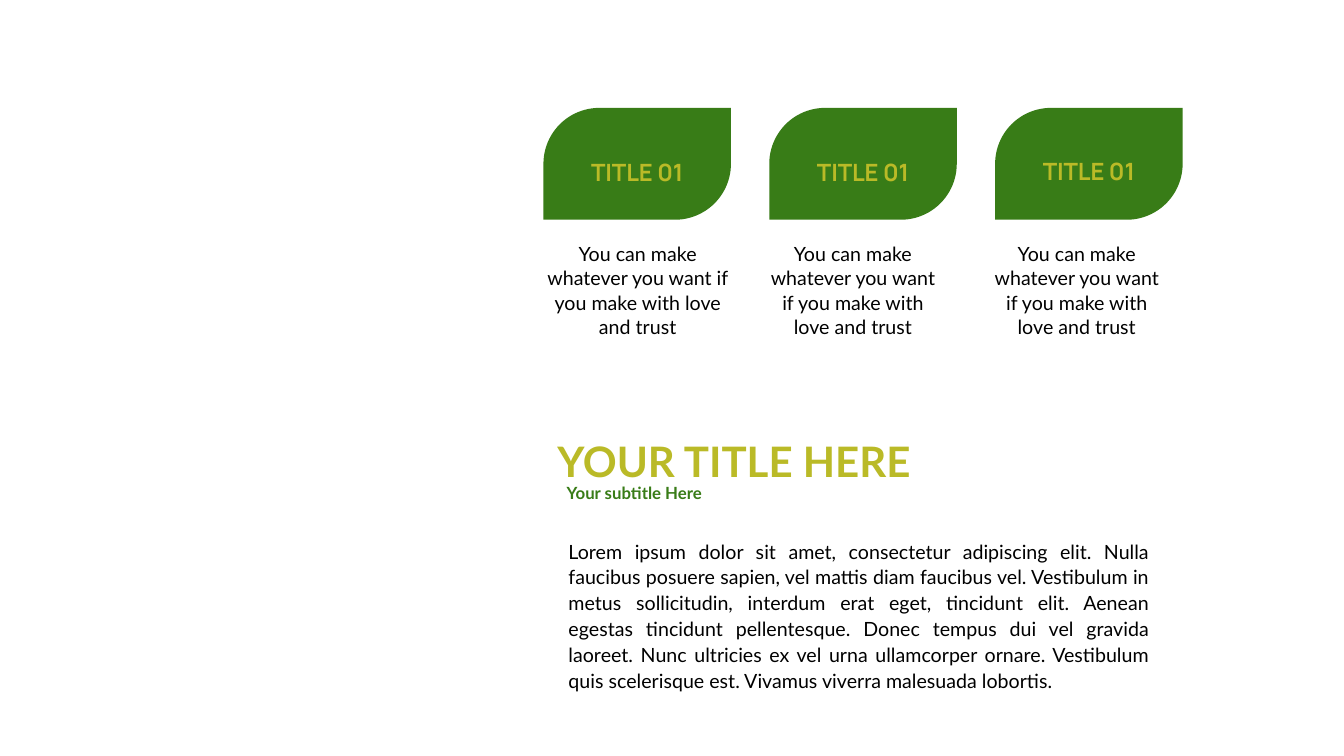
from pptx import Presentation
from pptx.dml.color import RGBColor
from pptx.enum.shapes import MSO_SHAPE
from pptx.enum.text import MSO_ANCHOR, PP_ALIGN
from pptx.util import Inches, Pt

GREEN = RGBColor(0x38, 0x7C, 0x17)
OLIVE = RGBColor(0xBA, 0xBA, 0x27)
BLACK = RGBColor(0, 0, 0)

CARD_TITLE = "TITLE 01"
CARD_TEXT = "You can make whatever you want if you make with love and trust"
BODY = (
    "Lorem ipsum dolor sit amet, consectetur adipiscing elit. Nulla faucibus "
    "posuere sapien, vel mattis diam faucibus vel. Vestibulum in metus "
    "sollicitudin, interdum erat eget, tincidunt elit. Aenean egestas tincidunt "
    "pellentesque. Donec tempus dui vel gravida laoreet. Nunc ultricies ex vel "
    "urna ullamcorper ornare. Vestibulum quis scelerisque est. Vivamus viverra "
    "malesuada lobortis."
)


def add_text(s, box, text, size, color, align, font="Lato", bold=False,
             spacing=None, anchor=MSO_ANCHOR.TOP, wrap=True, inset=(0.1, 0.05)):
    """Add a one-paragraph text box and return its run."""
    tf = s.shapes.add_textbox(*map(Inches, box)).text_frame
    tf.word_wrap = wrap
    tf.vertical_anchor = anchor
    tf.margin_left = tf.margin_right = Inches(inset[0])
    tf.margin_top = tf.margin_bottom = Inches(inset[1])
    p = tf.paragraphs[0]
    p.text = text
    p.alignment = align
    p.line_spacing = spacing
    r = p.runs[0]
    r.font.name = font
    r.font.size = Pt(size)
    r.font.bold = bold
    r.font.color.rgb = color
    return r


def add_card(s, x, y, w, title_dy, text_dx, text_w):
    """Add a leaf-shaped card with its title and the caption below it."""
    sp = s.shapes.add_shape(MSO_SHAPE.ROUND_2_DIAG_RECTANGLE,
                            Inches(x), Inches(y), Inches(w), Inches(1.11))
    sp.adjustments[0] = 0.5
    sp.adjustments[1] = 0
    sp.shadow.inherit = False
    sp.fill.solid()
    sp.fill.fore_color.rgb = GREEN
    sp.line.fill.background()
    r = add_text(s, (x, y + title_dy, w, 0.39), CARD_TITLE, 17, OLIVE,
                 PP_ALIGN.CENTER, font="Manrope", bold=True,
                 anchor=MSO_ANCHOR.BOTTOM)
    r.font._element.set("spc", "-10")
    add_text(s, (x + text_dx, y + 1.27, text_w, 1.09), CARD_TEXT, 14, BLACK,
             PP_ALIGN.CENTER, spacing=Pt(17.5))


def add_cards(s, x, y):
    """Add the row of three cards at an equal pitch."""
    details = [(0.44, -0.06, 1.99), (0.44, -0.1, 1.86), (0.43, -0.12, 1.86)]
    for i, (title_dy, text_dx, text_w) in enumerate(details):
        add_card(s, x + i * 2.24, y, 1.86, title_dy, text_dx, text_w)


def add_article(s, x, y):
    """Add the heading, subtitle and justified body text."""
    add_text(s, (x, y, 3.72, 0.61), "YOUR TITLE HERE", 30, OLIVE,
             PP_ALIGN.CENTER, bold=True, wrap=False)
    add_text(s, (x + 0.15, y + 0.45, 2.89, 0.28), "Your subtitle Here", 12,
             GREEN, PP_ALIGN.LEFT, bold=True, spacing=Pt(17.5),
             inset=(0.05, 0.03))
    add_text(s, (x + 0.12, y + 1.01, 5.96, 1.64), BODY, 14, BLACK,
             PP_ALIGN.JUSTIFY, spacing=1.1)


def main():
    """Build the slide and save it."""
    prs = Presentation()
    prs.slide_width = Inches(13.33)
    prs.slide_height = Inches(7.5)
    s = prs.slides.add_slide(prs.slide_layouts[6])
    add_cards(s, 5.39, 1.07)
    add_article(s, 5.42, 4.27)
    prs.save("out.pptx")


if __name__ == "__main__":
    main()
